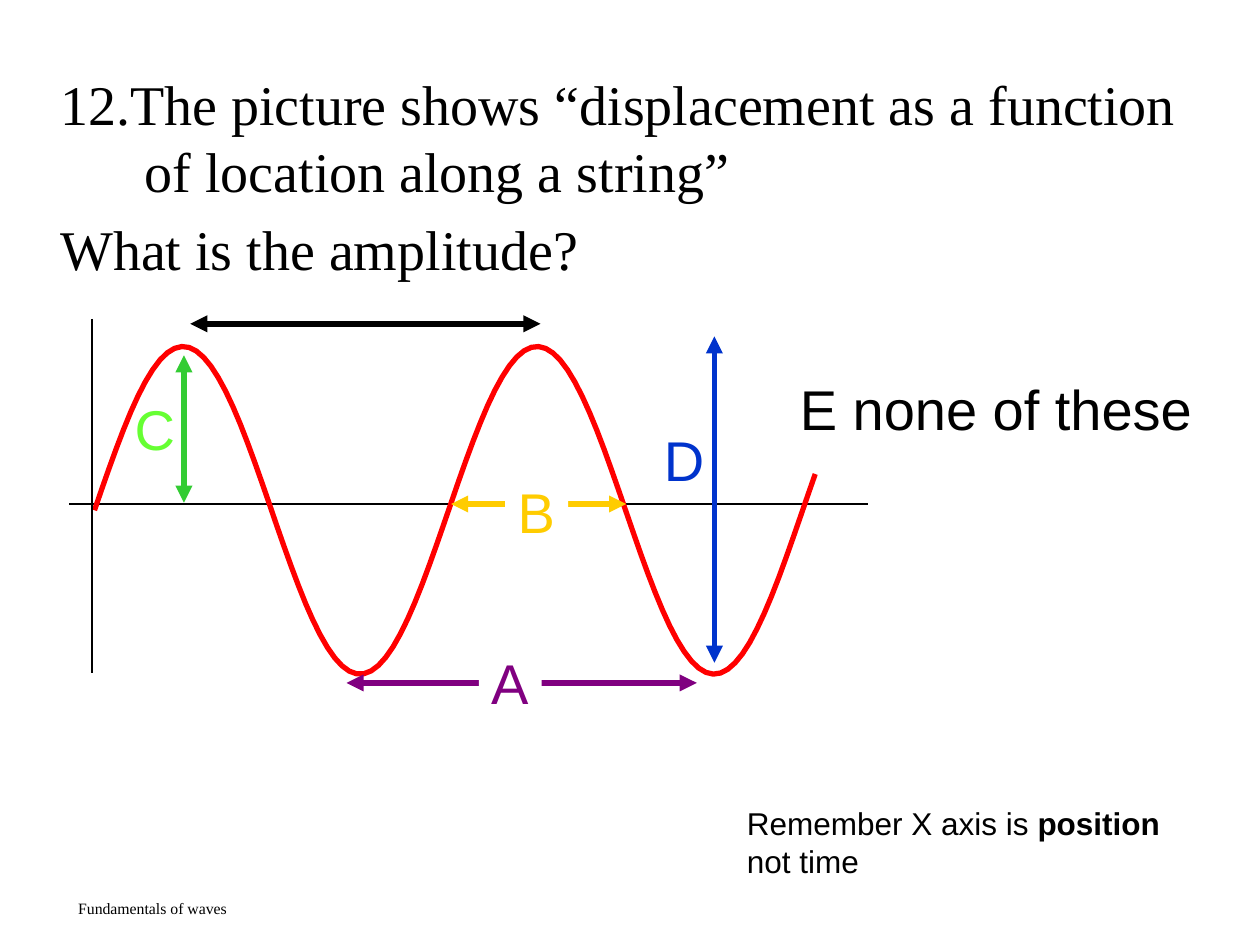
from dataclasses import dataclass
from math import pi, sin

from lxml import etree
from pptx import Presentation
from pptx.dml.color import RGBColor
from pptx.enum.shapes import MSO_CONNECTOR
from pptx.enum.text import MSO_ANCHOR, PP_ALIGN
from pptx.oxml.ns import qn
from pptx.slide import Slide
from pptx.util import Inches, Pt

STRAIGHT = MSO_CONNECTOR.STRAIGHT
TOP, MIDDLE = MSO_ANCHOR.TOP, MSO_ANCHOR.MIDDLE
LEFT, CENTER = PP_ALIGN.LEFT, PP_ALIGN.CENTER
BLACK = RGBColor(0x00, 0x00, 0x00)
WHITE = RGBColor(0xFF, 0xFF, 0xFF)
RED = RGBColor(0xFF, 0x00, 0x00)
GREEN = RGBColor(0x33, 0xCC, 0x33)
LIME = RGBColor(0x66, 0xFF, 0x33)
PURPLE = RGBColor(0x80, 0x00, 0x80)
GOLD = RGBColor(0xFF, 0xCC, 0x00)
BLUE = RGBColor(0x00, 0x33, 0xCC)
SERIF, SANS = "Times New Roman", "Arial"


@dataclass(frozen=True)
class Line:
    """A straight line, with a triangle at both ends if it is an arrow."""
    start: tuple[float, float]
    end: tuple[float, float]
    color: RGBColor
    width: float = 3.25
    arrow: bool = True


@dataclass(frozen=True)
class Label:
    """A text box; each paragraph is a tuple of (text, bold) runs."""
    box: tuple[float, float, float, float]
    paras: tuple[tuple[tuple[str, bool], ...], ...]
    size: float = 32
    font: str = SANS
    color: RGBColor = BLACK
    solid: bool = False
    wrap: bool = True
    align: PP_ALIGN = LEFT
    anchor: MSO_ANCHOR = TOP
    hang: float = 0


@dataclass(frozen=True)
class Wave:
    """A sine curve that starts on its middle line."""
    left: float
    mid: float
    width: float
    height: float
    period: float
    steps: int


def plain(text: str) -> tuple[tuple[str, bool], ...]:
    """Return a paragraph of one regular run."""
    return ((text, False),)


def draw_line(slide: Slide, line: Line) -> None:
    """Draw a line or a double arrow."""
    ends = [Inches(v) for v in (*line.start, *line.end)]
    shape = slide.shapes.add_connector(STRAIGHT, *ends)
    shape.line.color.rgb = line.color
    shape.line.width = Pt(line.width)
    props = shape._element.spPr
    if line.arrow:
        for tag in ("a:headEnd", "a:tailEnd"):
            etree.SubElement(props.find(qn("a:ln")), qn(tag), type="triangle")
    etree.SubElement(props, qn("a:effectLst"))


def draw_label(slide: Slide, label: Label) -> None:
    """Draw a text box."""
    shape = slide.shapes.add_textbox(*(Inches(v) for v in label.box))
    if label.solid:
        shape.fill.solid()
        shape.fill.fore_color.rgb = WHITE
    frame = shape.text_frame
    frame.word_wrap = label.wrap
    frame.vertical_anchor = label.anchor
    style = {"name": label.font, "size": Pt(label.size)}
    for index, runs in enumerate(label.paras):
        para = frame.add_paragraph() if index else frame.paragraphs[0]
        para.alignment = label.align
        if index:
            para.space_before = Pt(0.2 * label.size)
        if label.hang:
            props = para._p.get_or_add_pPr()
            props.set("marL", str(Inches(label.hang)))
            props.set("indent", str(-Inches(label.hang)))
        for text, bold in runs:
            run = para.add_run()
            run.text = text
            for key, value in (style | {"bold": bold}).items():
                setattr(run.font, key, value)
            run.font.color.rgb = label.color


def draw_wave(slide: Slide, wave: Wave) -> None:
    """Draw a sine curve."""
    points = []
    for step in range(wave.steps + 1):
        dist = wave.width * step / wave.steps
        rise = wave.height * sin(2 * pi * dist / wave.period)
        points.append((Inches(wave.left + dist), Inches(wave.mid - rise)))
    path = slide.shapes.build_freeform(*points[0])
    path.add_line_segments(points[1:], close=False)
    shape = path.convert_to_shape()
    shape.shadow.inherit = False
    shape.fill.background()
    shape.line.color.rgb = RED
    shape.line.width = Pt(3)


PARTS = (
    Label((0, 7.17, 2.42, 0.08), (plain("Fundamentals of waves"),),
          9, SERIF, align=CENTER, anchor=MIDDLE),
    Label((0.38, 0.5, 9.12, 1.17),
          (plain("12.The picture shows “displacement as a function "
                 "of location along a string”"),
           plain("What is the amplitude?")), font=SERIF, hang=0.67),
    Line((1.51, 2.57), (4.29, 2.57), BLACK),
    Label((5.83, 6.33, 3.5, 0.7),
          ((("Remember X axis is ", False), ("position", True),
            (" not time", False)),), 18),
    Line((1.46, 2.82), (1.46, 3.99), GREEN),
    Line((0.55, 4), (6.89, 4), BLACK, 0.75, False),
    Wave(0.75, 4.05, 5.72, 1.3, 2.81, 99),
    Line((2.75, 5.42), (5.53, 5.42), PURPLE),
    Label((3.8, 5.1, 0.5, 0.63), (plain("A"),), color=PURPLE,
          solid=True, wrap=False),
    Line((3.58, 4), (4.97, 4), GOLD),
    Label((4.01, 3.74, 0.5, 0.63), (plain("B"),), color=GOLD,
          solid=True, wrap=False),
    Label((0.97, 3.08, 0.47, 0.63), (plain("C"),), color=LIME),
    Line((5.67, 2.67), (5.67, 5.26), BLUE),
    Label((5.17, 3.33, 0.47, 0.63), (plain("D"),), color=BLUE),
    Line((0.73, 2.53), (0.73, 5.34), BLACK, 1, False),
    Label((6.25, 2.92, 3.33, 0.63), (plain("E none of these"),), solid=True),
)
DRAW = {Line: draw_line, Label: draw_label, Wave: draw_wave}


def main() -> None:
    """Build the slide on waves and save it."""
    deck = Presentation()
    deck.slide_width, deck.slide_height = Inches(10), Inches(7.5)
    slide = deck.slides.add_slide(deck.slide_layouts[6])
    for part in PARTS:
        DRAW[type(part)](slide, part)
    deck.save("out.pptx")


if __name__ == "__main__":
    main()
